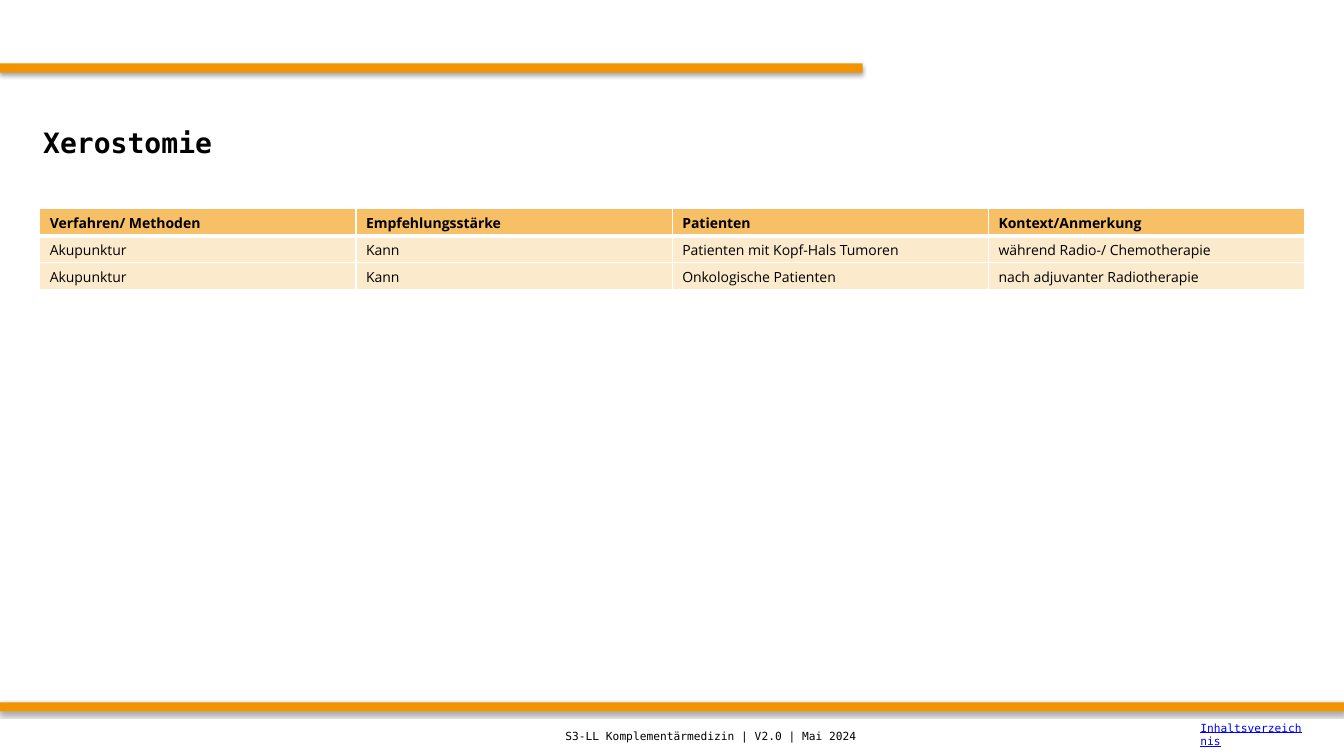
from dataclasses import dataclass

from lxml.etree import SubElement
from pptx import Presentation
from pptx.dml.color import RGBColor
from pptx.enum.shapes import MSO_SHAPE
from pptx.enum.text import MSO_ANCHOR
from pptx.oxml.ns import qn
from pptx.util import Cm, Pt


@dataclass(frozen=True)
class Theme:
    accent: str = "F29400"
    header: str = "F7BF66"
    body: str = "FCEACC"
    paper: str = "FFFFFF"
    ink: str = "000000"
    link: str = "0000FF"
    mono: str = "DejaVu Sans Mono"
    sans: str = "Open Sans"
    title_size: int = 20
    table_size: int = 10
    footer_size: int = 8


@dataclass(frozen=True)
class Box:
    left: float
    top: float
    width: float
    height: float

    def lengths(self):
        return [Cm(value) for value in (self.left, self.top, self.width, self.height)]


THEME = Theme()
PAGE = Box(0, 0, 33.87, 19.05)
TABLE_ROWS = [
    ["Verfahren/ Methoden", "Empfehlungsstärke", "Patienten", "Kontext/Anmerkung"],
    ["Akupunktur", "Kann", "Patienten mit Kopf-Hals Tumoren", "während Radio-/ Chemotherapie"],
    ["Akupunktur", "Kann", "Onkologische Patienten", "nach adjuvanter Radiotherapie"],
]


def write_text(para, text, color, **formats):
    span = para.add_run()
    span.text = text
    for name, value in formats.items():
        setattr(span.font, name, value)
    span.font.color.rgb = RGBColor.from_string(color)


def add_color(parent, color):
    return SubElement(parent, qn("a:srgbClr"), val=color)


def add_bar(page, box):
    bar = page.shapes.add_shape(MSO_SHAPE.RECTANGLE, *box.lengths())
    bar.fill.solid()
    bar.fill.fore_color.rgb = RGBColor.from_string(THEME.accent)
    bar.line.fill.background()
    bar.shadow.inherit = False
    effects = bar.element.spPr.find(qn("a:effectLst"))
    shadow = SubElement(
        effects, qn("a:outerShdw"),
        blurRad=str(Pt(3.1)), dist=str(Pt(1.8)), dir="5400000", rotWithShape="0",
    )
    SubElement(add_color(shadow, THEME.ink), qn("a:alpha"), val="35000")


def add_label(page, box, text, color=THEME.ink, **formats):
    label = page.shapes.add_textbox(*box.lengths())
    frame = label.text_frame
    frame.word_wrap = True
    frame.vertical_anchor = MSO_ANCHOR.MIDDLE
    write_text(frame.paragraphs[0], text, color, name=THEME.mono, **formats)


def set_borders(cell, widths):
    properties = cell._tc.get_or_add_tcPr()
    for side, width in widths.items():
        line = SubElement(properties, qn(f"a:ln{side}"), w=str(Pt(width)))
        add_color(SubElement(line, qn("a:solidFill")), THEME.paper)


def add_recommendations(page, box, rows):
    table = page.shapes.add_table(len(rows), len(rows[0]), *box.lengths()).table
    table.horz_banding = False
    for row_index, row in enumerate(rows):
        is_header = row_index == 0
        widths = {"L": 1, "R": 1, "T": 3 if row_index == 1 else 1, "B": 3 if is_header else 1}
        for column_index, text in enumerate(row):
            cell = table.cell(row_index, column_index)
            set_borders(cell, widths)
            cell.fill.solid()
            cell.fill.fore_color.rgb = RGBColor.from_string(THEME.header if is_header else THEME.body)
            para = cell.text_frame.paragraphs[0]
            para.space_after = Pt(5)
            write_text(para, text, THEME.ink, name=THEME.sans, size=Pt(THEME.table_size), bold=is_header)


def add_header(page, box):
    add_bar(page, Box(box.left, box.top, 21.74, 0.23))
    title_box = Box(box.left + 0.84, box.top + 0.51, 32.18, 2.97)
    add_label(page, title_box, "Xerostomie", size=Pt(THEME.title_size), bold=True)


def add_footer(page, box):
    add_bar(page, Box(box.left, box.top, box.width, 0.23))
    size = Pt(THEME.footer_size)
    add_label(page, Box(box.left + 14, box.top + 0.36, 14, 0.99),
              "S3-LL Komplementärmedizin | V2.0 | Mai 2024", size=size)
    add_label(page, Box(box.left + 30, box.top + 0.31, 3.1, 0.99),
              "Inhaltsverzeichnis", THEME.link, size=size, underline=True)


def main():
    deck = Presentation()
    deck.slide_width, deck.slide_height = Cm(PAGE.width), Cm(PAGE.height)
    page = deck.slides.add_slide(deck.slide_layouts[6])
    add_header(page, Box(0, 1.6, PAGE.width, 3.48))
    add_recommendations(page, Box(1, 5.26, 31.88, 2.04), TABLE_ROWS)
    add_footer(page, Box(0, 17.7, PAGE.width, 1.35))
    deck.save("out.pptx")


if __name__ == "__main__":
    main()
